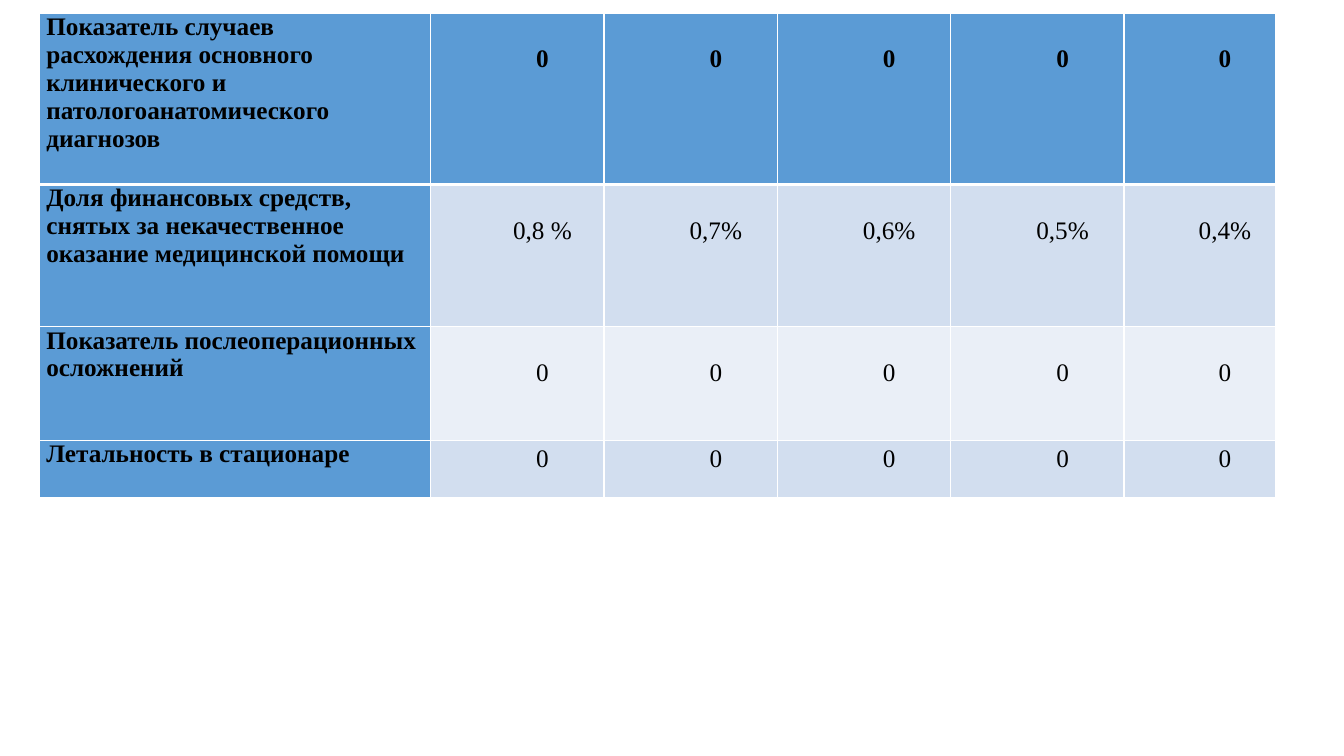
from lxml.etree import SubElement
from pptx import Presentation
from pptx.dml.color import RGBColor
from pptx.enum.text import PP_ALIGN as Align
from pptx.oxml.ns import qn
from pptx.util import Inches, Pt

ROWS = [
    ("Показатель случаев расхождения основного клинического и патологоанатомического диагнозов",
     "0", "0", "0", "0", "0"),
    ("Доля финансовых средств, снятых за некачественное оказание медицинской помощи",
     "0,8 %", "0,7%", "0,6%", "0,5%", "0,4%"),
    ("Показатель послеоперационных осложнений", "0", "0", "0", "0", "0"),
    ("Летальность в стационаре", "0", "0", "0", "0", "0"),
]
COLUMN_WIDTHS = [3.88] + [1.72] * 4 + [1.5]
ROW_HEIGHTS = [1.7, 1.41, 1.13, 0.57]
VALUE_TOPS = [0.28, 0.28, 0.28, 0]

BLUE = RGBColor(0x5B, 0x9B, 0xD5)
BAND_DARK = RGBColor(0xD2, 0xDE, 0xEF)
BAND_LIGHT = RGBColor(0xEA, 0xEF, 0xF7)
BLACK = RGBColor(0, 0, 0)
WHITE = RGBColor(255, 255, 255)
ROW_FILLS = [BLUE, BAND_DARK, BAND_LIGHT, BAND_DARK]


def set_all(target, values):
    for name, value in values.items():
        setattr(target, name, value)


def add_borders(cell, row):
    properties = cell._tc.get_or_add_tcPr()
    widths = {"lnL": 1, "lnR": 1, "lnT": 3 if row == 1 else 1, "lnB": 3 if row == 0 else 1}
    for side, width in widths.items():
        line = SubElement(properties, qn("a:" + side), w=str(Pt(width)))
        fill = SubElement(line, qn("a:solidFill"))
        SubElement(fill, qn("a:srgbClr"), val=str(WHITE))


def fill_cell(cell, text, row, column):
    is_label = column == 0
    add_borders(cell, row)
    cell.fill.solid()
    cell.fill.fore_color.rgb = BLUE if is_label else ROW_FILLS[row]
    set_all(cell, {
        "margin_left": Inches(0.07), "margin_right": Inches(0.07),
        "margin_top": Inches(0 if is_label else VALUE_TOPS[row]), "margin_bottom": 0,
    })
    para = cell.text_frame.paragraphs[0]
    if not is_label:
        set_all(para, {"alignment": Align.CENTER, "line_spacing": 1.15})
        para._p.get_or_add_pPr().set("marL", str(Inches(0.5)))
    span = para.add_run()
    span.text = text
    set_all(span.font, {"name": "Times New Roman", "size": Pt(18), "bold": is_label or row == 0})
    span.font.color.rgb = BLACK


def main():
    deck = Presentation()
    set_all(deck, {"slide_width": Inches(13.33), "slide_height": Inches(7.5)})
    page = deck.slides.add_slide(deck.slide_layouts[6])
    table = page.shapes.add_table(
        len(ROWS), len(COLUMN_WIDTHS), Inches(0.39), Inches(0.13),
        Inches(sum(COLUMN_WIDTHS)), Inches(sum(ROW_HEIGHTS))).table
    set_all(table, {"first_col": True, "first_row": True, "horz_banding": True})
    for column, width in zip(table.columns, COLUMN_WIDTHS):
        column.width = Inches(width)
    for row, height in zip(table.rows, ROW_HEIGHTS):
        row.height = Inches(height)
    for row, texts in enumerate(ROWS):
        for column, text in enumerate(texts):
            fill_cell(table.cell(row, column), text, row, column)
    deck.save("out.pptx")


if __name__ == "__main__":
    main()
